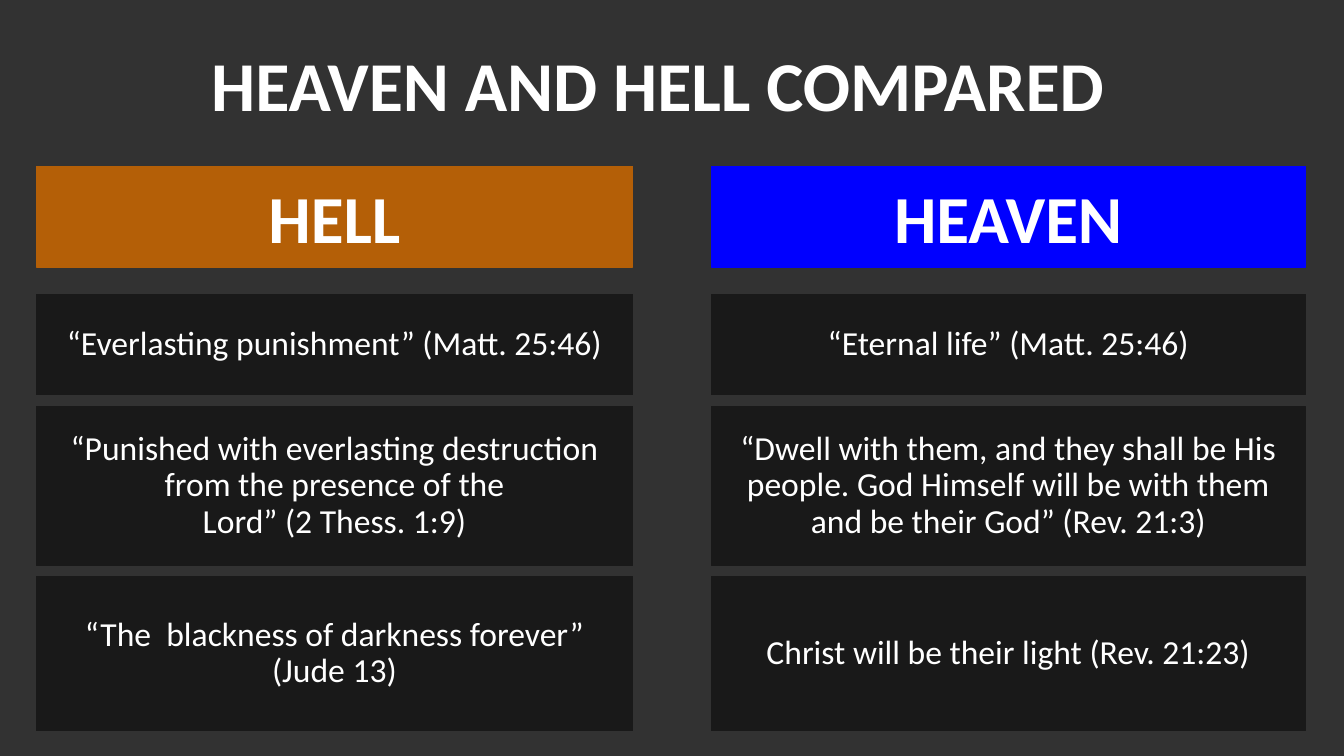
from pptx import Presentation
from pptx.dml.color import RGBColor
from pptx.enum.shapes import MSO_SHAPE
from pptx.enum.text import MSO_ANCHOR, MSO_AUTO_SIZE, PP_ALIGN
from pptx.util import Cm, Pt

RECTANGLE = MSO_SHAPE.RECTANGLE
MIDDLE = MSO_ANCHOR.MIDDLE
NO_AUTOFIT = MSO_AUTO_SIZE.NONE
CENTER = PP_ALIGN.CENTER

BACKGROUND = RGBColor(0x32, 0x32, 0x32)
PANEL = RGBColor(0x19, 0x19, 0x19)
ORANGE = RGBColor(0xB4, 0x5F, 0x07)
BLUE = RGBColor(0x00, 0x00, 0xFF)
WHITE = RGBColor(0xFF, 0xFF, 0xFF)

FONT = "Calibri"
ROWS = [(4.19, 2.54), (7.41, 2.54), (10.24, 4.01), (14.53, 3.89)]
COLUMNS = [
    (0.91, 15.04, ORANGE, "hell", [
        "“Everlasting punishment” (Matt. 25:46)",
        "“Punished with everlasting destruction from the presence of the\n"
        "Lord” (2 Thess. 1:9)",
        "“The  blackness of darkness forever” (Jude 13)",
    ]),
    (17.93, 14.96, BLUE, "heaven", [
        "“Eternal life” (Matt. 25:46)",
        "“Dwell with them, and they shall be His people. "
        "God Himself will be with them and be their God” (Rev. 21:3)",
        "Christ will be their light (Rev. 21:23)",
    ]),
]


def format_text(tf, text, size, bold=False, spacing=1.0):
    tf.text = text
    tf.word_wrap = True
    tf.auto_size = NO_AUTOFIT
    tf.vertical_anchor = MIDDLE
    for p in tf.paragraphs:
        p.alignment = CENTER
        p.line_spacing = spacing
        p.font.name = FONT
        p.font.size = Pt(size)
        p.font.bold = bold
        p.font.color.rgb = WHITE


def add_title(s, text):
    title = s.shapes.title
    title.left, title.top = Cm(2.26), Cm(0.91)
    title.width, title.height = Cm(28.65), Cm(2.39)
    format_text(title.text_frame, text, 50, bold=True)


def add_panel(s, left, top, width, height, color, text, size, bold=False):
    sp = s.shapes.add_shape(RECTANGLE, Cm(left), Cm(top), Cm(width), Cm(height))
    sp.shadow.inherit = False
    sp.fill.solid()
    sp.fill.fore_color.rgb = color
    sp.line.color.rgb = color
    sp.line.width = Pt(0.75)
    format_text(sp.text_frame, text, size, bold, spacing=0.9)
    return sp


def add_column(s, left, width, color, heading, verses):
    top, height = ROWS[0]
    header = add_panel(s, left, top, width, height, color, heading, 60, bold=True)
    r = header.text_frame.paragraphs[0].runs[0]
    r._r.get_or_add_rPr().set("cap", "small")
    for (top, height), verse in zip(ROWS[1:], verses):
        add_panel(s, left, top, width, height, PANEL, verse, 24)


def main():
    prs = Presentation()
    prs.slide_width, prs.slide_height = Cm(33.87), Cm(19.05)
    s = prs.slides.add_slide(prs.slide_layouts[5])
    s.background.fill.solid()
    s.background.fill.fore_color.rgb = BACKGROUND
    add_title(s, "HEAVEN AND HELL COMPARED")
    for column in COLUMNS:
        add_column(s, *column)
    prs.save("out.pptx")


if __name__ == "__main__":
    main()
